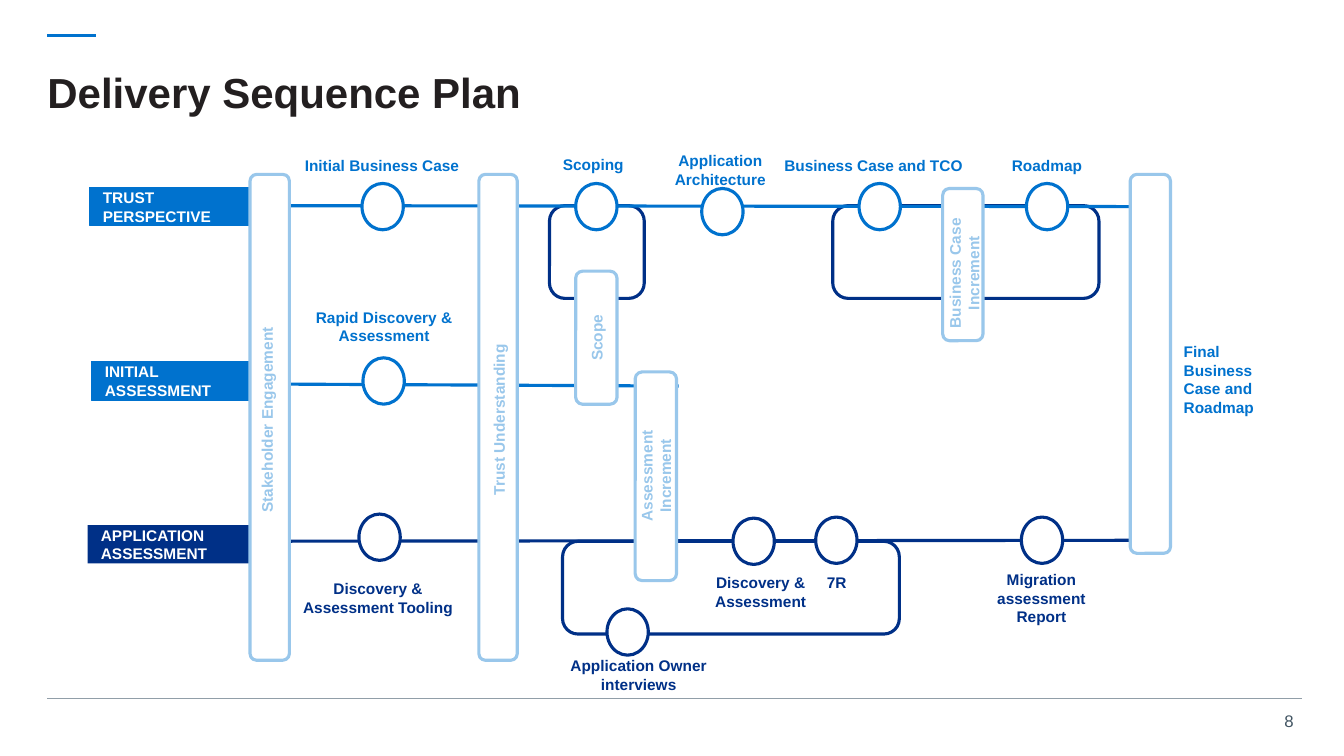
import dataclasses

import lxml.etree
import pptx
import pptx.dml.color
import pptx.enum.shapes
import pptx.enum.text
import pptx.oxml.ns
import pptx.util

Inches = pptx.util.Inches
Pt = pptx.util.Pt
Kind = pptx.enum.shapes.MSO_SHAPE
Align = pptx.enum.text.PP_ALIGN
Anchor = pptx.enum.text.MSO_ANCHOR

BLUE, NAVY, PALE = "0072CE", "003087", "99C7EB"
WHITE, INK, GREY, RULE = "FFFFFF", "231F20", "425563", "919EA8"
LEFT, MID, RIGHT = Align.LEFT, Align.CENTER, Align.RIGHT
TOP, HALF = Anchor.TOP, Anchor.MIDDLE


@dataclasses.dataclass
class Box:
    left: float
    top: float
    width: float
    height: float

    def place(self) -> list:
        return [Inches(v) for v in (self.left, self.top, self.width, self.height)]


@dataclasses.dataclass
class Rail:
    start: tuple
    end: tuple
    hue: str
    weight: float = 2.25


@dataclasses.dataclass
class Band:
    box: Box
    text: str
    hue: str
    edge: str | None


@dataclasses.dataclass
class Node:
    left: float
    top: float
    hue: str


@dataclasses.dataclass
class Label:
    box: Box
    text: str
    hue: str
    anchor: Anchor = HALF
    align: Align = MID
    turn: int = 0


RULES = [
    Rail((0.47, 0.35), (0.95, 0.35), BLUE, 2),
    Rail((0.47, 6.93), (12.91, 6.93), RULE, 0.75),
]
LOOPS = [
    Box(8.26, 2.04, 2.64, 0.92),
    Box(5.45, 2.04, 0.94, 0.92),
    Box(5.58, 5.37, 3.34, 0.92),
]
RAILS = [
    Rail((2.13, 2.04), (11.38, 2.05), BLUE),
    Rail((2.66, 3.81), (6.73, 3.83), BLUE),
    Rail((2.13, 5.37), (11.48, 5.36), NAVY),
]
BANDS = [
    Band(Box(0.89, 1.86, 1.95, 0.38), "TRUST\nPERSPECTIVE", BLUE, BLUE),
    Band(Box(0.91, 3.59, 1.95, 0.38), "INITIAL\nASSESSMENT", BLUE, BLUE),
    Band(Box(0.87, 5.21, 1.98, 0.38), "APPLICATION ASSESSMENT", NAVY, None),
]
BARS = [
    Box(2.48, 1.73, 0.39, 4.82),
    Box(4.75, 1.73, 0.38, 4.82),
    Box(5.71, 2.69, 0.41, 1.32),
    Box(6.3, 3.69, 0.41, 2.07),
    Box(9.35, 1.87, 0.4, 1.51),
    Box(11.21, 1.73, 0.4, 3.76),
]
NODES = [
    Node(3.59, 1.82, BLUE),
    Node(5.71, 1.82, BLUE),
    Node(6.96, 1.87, BLUE),
    Node(8.52, 1.82, BLUE),
    Node(10.18, 1.82, BLUE),
    Node(3.6, 3.55, BLUE),
    Node(3.56, 5.1, NAVY),
    Node(7.27, 5.14, NAVY),
    Node(8.09, 5.13, NAVY),
    Node(10.13, 5.13, NAVY),
    Node(6.02, 6.04, NAVY),
]
LABELS = [
    Label(Box(2.47, 1.41, 2.64, 0.46), "Initial Business Case", BLUE),
    Label(Box(5.12, 1.41, 1.53, 0.68), "Scoping", BLUE, TOP),
    Label(Box(6.38, 1.37, 1.53, 0.68), "Application Architecture", BLUE, TOP),
    Label(Box(7.4, 1.41, 2.53, 0.46), "Business Case and TCO", BLUE),
    Label(Box(9.82, 1.41, 1.13, 0.46), "Roadmap", BLUE),
    Label(Box(2.72, 3.01, 2.18, 0.46), "Rapid Discovery & Assessment", BLUE),
    Label(Box(11.61, 3.29, 1.14, 0.95), "Final Business Case and Roadmap", BLUE, HALF, LEFT),
    Label(Box(2.81, 5.62, 1.88, 0.69), "Discovery &\nAssessment Tooling", NAVY, TOP),
    Label(Box(6.91, 5.56, 1.27, 0.63), "Discovery &\nAssessment", NAVY, TOP),
    Label(Box(7.73, 5.56, 1.14, 0.41), "7R", NAVY, TOP),
    Label(Box(9.58, 5.63, 1.5, 0.61), "Migration assessment Report", NAVY),
    Label(Box(5.4, 6.38, 1.87, 0.48), "Application Owner interviews", NAVY, TOP),
    Label(Box(1.08, 3.98, 3.13, 0.37), "Stakeholder Engagement", PALE, turn=270),
    Label(Box(3.38, 3.97, 3.08, 0.39), "Trust Understanding", PALE, TOP, turn=270),
    Label(Box(5.25, 3.16, 1.33, 0.38), "Scope", PALE, turn=270),
    Label(Box(5.47, 4.53, 2.07, 0.38), "Assessment\nIncrement", PALE, turn=270),
    Label(Box(8.72, 2.52, 1.68, 0.38), "Business Case\nIncrement", PALE, turn=270),
]


def paint(target, hue: str) -> None:
    target.rgb = pptx.dml.color.RGBColor.from_string(hue)


def write(shape, text: str, hue: str, align: Align, anchor: Anchor,
          size: float = 11, bold: bool = True, inset: float = 0.13) -> None:
    frame = shape.text_frame
    frame.word_wrap = True
    frame.auto_size = pptx.enum.text.MSO_AUTO_SIZE.NONE
    frame.vertical_anchor = anchor
    frame.margin_left = frame.margin_right = Inches(inset)
    frame.margin_top = frame.margin_bottom = Inches(inset)
    for i, line in enumerate(text.split("\n")):
        para = frame.add_paragraph() if i else frame.paragraphs[0]
        para.alignment = align
        run = para.add_run()
        run.text = line
        run.font.name = "Arial"
        run.font.size = Pt(size)
        run.font.bold = bold
        paint(run.font.color, hue)


def draw(slide, kind: Kind, box: Box, fill: str, edge: str | None, weight: float = 2.25):
    shape = slide.shapes.add_shape(kind, *box.place())
    shape.shadow.inherit = False
    shape.fill.solid()
    paint(shape.fill.fore_color, fill)
    if edge:
        paint(shape.line.color, edge)
        shape.line.width = Pt(weight)
    else:
        shape.line.fill.background()
    return shape


def link(slide, rail: Rail) -> None:
    ends = [Inches(v) for v in (*rail.start, *rail.end)]
    line = slide.shapes.add_connector(pptx.enum.shapes.MSO_CONNECTOR.STRAIGHT, *ends)
    paint(line.line.color, rail.hue)
    line.line.width = Pt(rail.weight)
    lxml.etree.SubElement(line._element.spPr, pptx.oxml.ns.qn("a:effectLst"))


def head(slide) -> None:
    title = slide.shapes.title
    title.left, title.top, title.width, title.height = Box(0.47, 0.47, 12.47, 0.95).place()
    write(title, "Delivery Sequence Plan", INK, LEFT, HALF, size=30, inset=0)
    title.text_frame.paragraphs[0].line_spacing = 0.9


def note(slide, label: Label) -> None:
    shape = slide.shapes.add_textbox(*label.box.place())
    shape.rotation = label.turn
    write(shape, label.text, label.hue, label.align, label.anchor)


def main() -> None:
    deck = pptx.Presentation()
    deck.slide_width, deck.slide_height = Inches(13.33), Inches(7.5)
    slide = deck.slides.add_slide(deck.slide_layouts[5])
    head(slide)
    for loop in LOOPS:
        draw(slide, Kind.ROUNDED_RECTANGLE, loop, WHITE, NAVY)
    for rail in RULES + RAILS:
        link(slide, rail)
    for band in BANDS:
        shape = draw(slide, Kind.RECTANGLE, band.box, band.hue, band.edge, 0.75)
        write(shape, band.text, WHITE, LEFT, HALF)
    for bar in BARS:
        draw(slide, Kind.ROUNDED_RECTANGLE, bar, WHITE, PALE)
    for node in NODES:
        draw(slide, Kind.OVAL, Box(node.left, node.top, 0.41, 0.46), WHITE, node.hue)
    for label in LABELS:
        note(slide, label)
    page = slide.shapes.add_textbox(*Box(12.52, 7, 0.5, 0.3).place())
    page.width = Inches(0.41)
    write(page, "8", GREY, RIGHT, TOP, size=12, bold=False, inset=0.05)
    page.text_frame.margin_right = Inches(0.1)
    deck.save("out.pptx")


if __name__ == "__main__":
    main()
